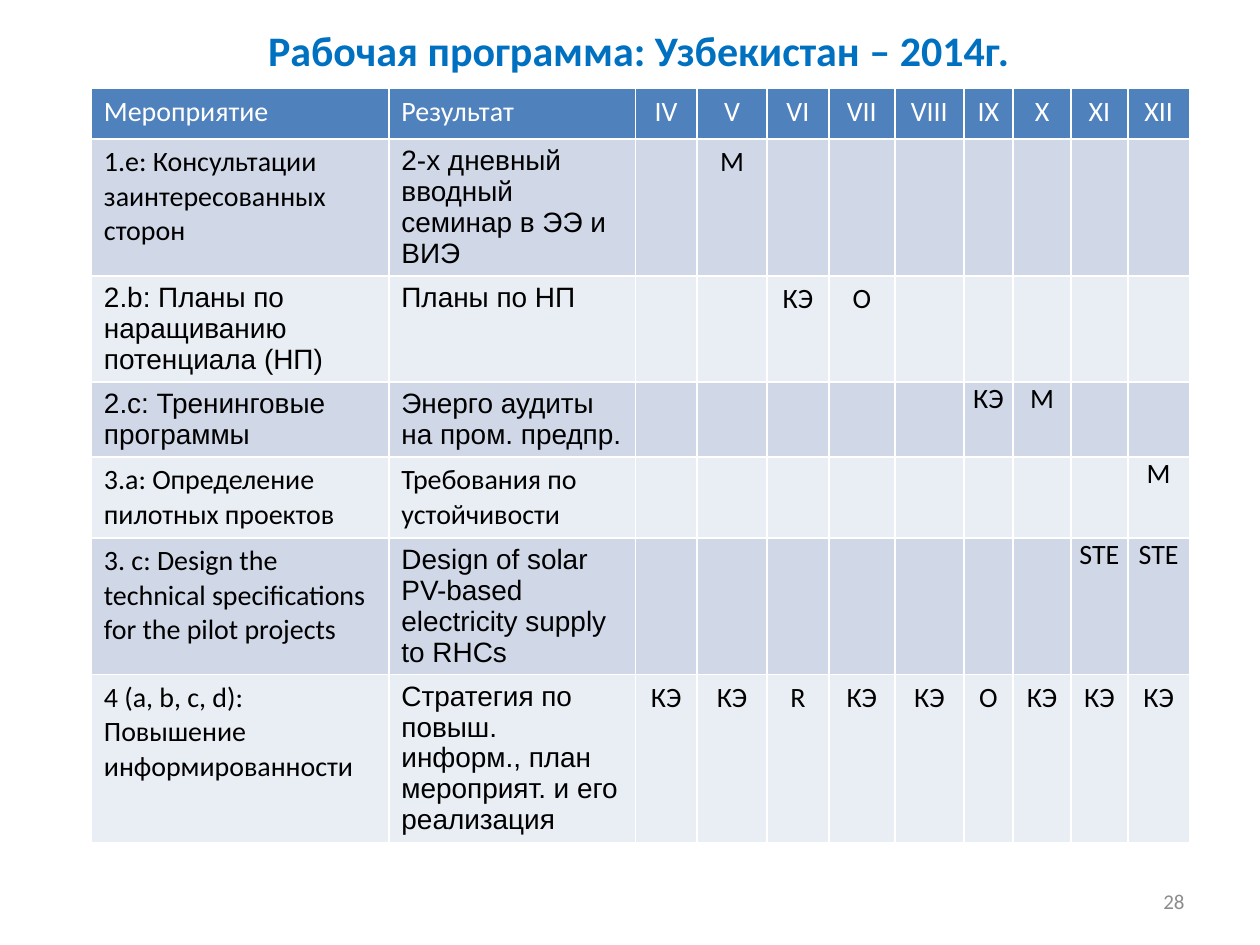
from dataclasses import dataclass

from lxml.etree import SubElement
from pptx import Presentation
from pptx.dml.color import RGBColor as RGB
from pptx.enum.text import MSO_ANCHOR as Anchor, PP_ALIGN as Align
from pptx.oxml.ns import qn
from pptx.util import Pt


@dataclass(frozen=True)
class Theme:
    title: RGB = RGB(0x00, 0x70, 0xC0)
    header: RGB = RGB(0x4F, 0x81, 0xBD)
    bands: tuple = (RGB(0xD0, 0xD8, 0xE8), RGB(0xE9, 0xED, 0xF4))
    white: RGB = RGB(0xFF, 0xFF, 0xFF)
    black: RGB = RGB(0x00, 0x00, 0x00)
    muted: RGB = RGB(0x8C, 0x8C, 0x8C)
    title_size: Pt = Pt(24)
    body_size: Pt = Pt(16)
    number_size: Pt = Pt(12)
    arial_leading: Pt = Pt(17.7)


theme = Theme()
CALIBRI, ARIAL = "Calibri", "Arial"

MONTHS = ["IV", "V", "VI", "VII", "VIII", "IX", "X", "XI", "XII"]
COLUMN_WIDTHS = [170, 140.8, 35.3, 40, 35.3, 37.8, 39.4, 28.2, 33.1, 32.5, 35.2]
HEADER_HEIGHT = 29

# height, (activity, font), (result, font), marks by month, marks flush with the cell edge
ACTIVITIES = [
    (78.2, ("1.e: Консультации заинтересованных сторон", CALIBRI),
     ("2-х дневный вводный семинар в ЭЭ и ВИЭ", ARIAL), {"V": "М"}, False),
    (60.6, ("2.b: Планы по наращиванию потенциала (НП)", ARIAL),
     ("Планы по НП", ARIAL), {"VI": "КЭ", "VII": "О"}, False),
    (43, ("2.c: Тренинговые программы", ARIAL),
     ("Энерго аудиты на пром. предпр.", ARIAL), {"IX": "КЭ", "X": "М"}, True),
    (46.25, ("3.a: Определение пилотных проектов", CALIBRI),
     ("Требования по устойчивости", CALIBRI), {"XII": "М"}, True),
    (78.2, ("3. c: Design the technical specifications for the pilot projects", CALIBRI),
     ("Design of solar PV-based electricity supply to RHCs", ARIAL),
     {"XI": "STE", "XII": "STE"}, True),
    (96, ("4 (a, b, c, d): Повышение информированности", CALIBRI),
     ("Стратегия по повыш. информ., план мероприят. и его реализация", ARIAL),
     {**dict.fromkeys(MONTHS, "КЭ"), "VI": "R", "IX": "О"}, False),
]


def write(frame, text, size, color, align=Align.LEFT, font=CALIBRI, bold=False):
    paragraph = frame.paragraphs[0]
    paragraph.text = text
    paragraph.alignment = align
    paragraph.font.name = font
    paragraph.font.size = size
    paragraph.font.bold = bold
    paragraph.font.color.rgb = color
    if font == ARIAL:
        paragraph.line_spacing = theme.arial_leading


def paint(cell, fill):
    """Give the cell thin white borders and a solid fill."""
    properties = cell._tc.get_or_add_tcPr()
    for side in "LRTB":
        line = SubElement(properties, qn(f"a:ln{side}"), w=str(Pt(1)))
        solid = SubElement(line, qn("a:solidFill"))
        SubElement(solid, qn("a:srgbClr"), val=str(theme.white))
    cell.fill.solid()
    cell.fill.fore_color.rgb = fill


prs = Presentation()
prs.slide_width, prs.slide_height = Pt(720), Pt(540)
slide = prs.slides.add_slide(prs.slide_layouts[6])

page_number = slide.shapes.add_textbox(Pt(516), Pt(500.5), Pt(168), Pt(28.75)).text_frame
page_number.word_wrap = True
page_number.vertical_anchor = Anchor.MIDDLE
write(page_number, "28", theme.number_size, theme.muted, Align.RIGHT)

row_heights = [HEADER_HEIGHT] + [activity[0] for activity in ACTIVITIES]
programme = slide.shapes.add_table(
    len(row_heights), len(COLUMN_WIDTHS), Pt(52.2), Pt(50.4),
    Pt(sum(COLUMN_WIDTHS)), Pt(sum(row_heights))).table
for column, width in zip(programme.columns, COLUMN_WIDTHS):
    column.width = Pt(width)
for row, height in zip(programme.rows, row_heights):
    row.height = Pt(height)

for index, heading in enumerate(["Мероприятие", "Результат"] + MONTHS):
    cell = programme.cell(0, index)
    paint(cell, theme.header)
    write(cell.text_frame, heading, theme.body_size, theme.white,
          Align.LEFT if index < 2 else Align.CENTER)

for number, (_, activity, result, marks, flush) in enumerate(ACTIVITIES, start=1):
    for index in range(len(COLUMN_WIDTHS)):
        paint(programme.cell(number, index), theme.bands[(number - 1) % 2])
    for index, (text, font) in enumerate((activity, result)):
        write(programme.cell(number, index).text_frame, text,
              theme.body_size, theme.black, font=font)
    for month, mark in marks.items():
        cell = programme.cell(number, 2 + MONTHS.index(month))
        if flush:
            cell.margin_left = cell.margin_right = Pt(0)
            cell.margin_top = cell.margin_bottom = Pt(0)
        write(cell.text_frame, mark, theme.body_size, theme.black, Align.CENTER)

title = slide.shapes.add_textbox(Pt(68), Pt(0), Pt(594), Pt(56.5)).text_frame
title.word_wrap = True
title.vertical_anchor = Anchor.MIDDLE
write(title, "Рабочая программа: Узбекистан – 2014г.", theme.title_size,
      theme.title, Align.CENTER, bold=True)

prs.save("out.pptx")
